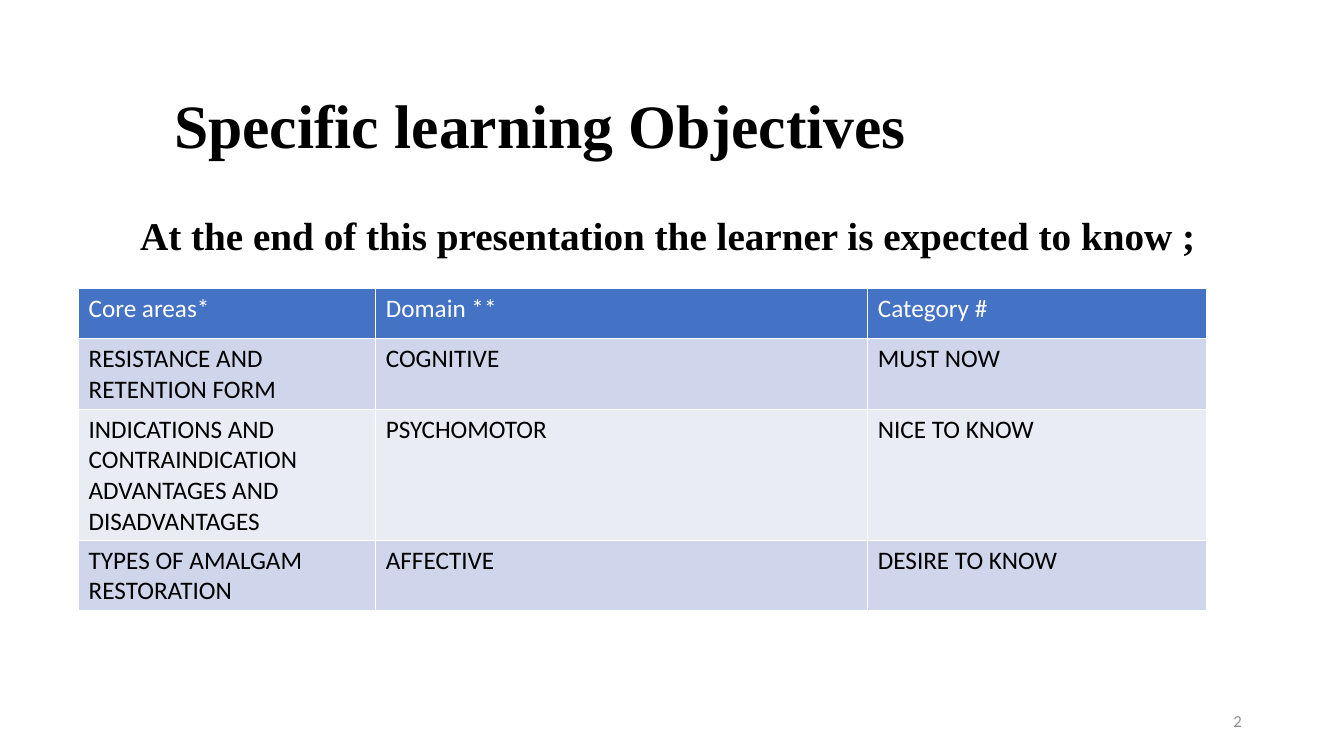
import pptx
import pptx.util
import pptx.dml.color
import pptx.enum.text
from dataclasses import dataclass

Cm = pptx.util.Cm
ALIGN = pptx.enum.text.PP_ALIGN
ANCHOR = pptx.enum.text.MSO_ANCHOR


@dataclass(frozen=True)
class Theme:
    heading_font: str = "Times New Roman"
    body_font: str = "Calibri"
    title_size: int = 44
    lead_size: int = 28
    table_size: int = 18
    number_size: int = 12
    ink: str = "000000"
    header_ink: str = "FFFFFF"
    muted: str = "8C8C8C"
    header_fill: str = "4472C4"
    bands: tuple = ("CFD5EA", "E9EBF5")


THEME = Theme()
TITLE = "Specific learning Objectives"
LEAD = "At the end of this presentation the learner is expected to know ;"
PAGE_NUMBER = "2"
OBJECTIVES = [
    ("Core areas*", "Domain **", "Category #"),
    ("RESISTANCE AND RETENTION FORM", "COGNITIVE", "MUST NOW"),
    ("INDICATIONS AND CONTRAINDICATION\nADVANTAGES AND DISADVANTAGES",
     "PSYCHOMOTOR", "NICE TO KNOW"),
    ("TYPES OF AMALGAM RESTORATION", "AFFECTIVE", "DESIRE TO KNOW"),
]
COLUMN_WIDTHS = (7.49, 12.4, 8.53)
ROW_HEIGHT = 1.27
TABLE_LEFT, TABLE_TOP = 1.98, 7.26


def color(value):
    return pptx.dml.color.RGBColor.from_string(value)


def write(frame, text, font, size, ink, bold=False, align=ALIGN.LEFT, spacing=1.0):
    frame.text = text
    for para in frame.paragraphs:
        para.alignment = align
        para.line_spacing = spacing
        para.font.name = font
        para.font.size = pptx.util.Pt(size)
        para.font.bold = bold
        para.font.color.rgb = color(ink)


def add_text(page, area, text, font, size, ink, anchor=ANCHOR.MIDDLE, **style):
    box = page.shapes.add_textbox(*map(Cm, area))
    box.text_frame.word_wrap = True
    box.text_frame.vertical_anchor = anchor
    write(box.text_frame, text, font, size, ink, **style)


def add_objectives(page):
    table = page.shapes.add_table(
        len(OBJECTIVES), len(COLUMN_WIDTHS), Cm(TABLE_LEFT), Cm(TABLE_TOP),
        Cm(sum(COLUMN_WIDTHS)), Cm(ROW_HEIGHT * len(OBJECTIVES))).table
    for column, width in zip(table.columns, COLUMN_WIDTHS):
        column.width = Cm(width)
    for row_index, texts in enumerate(OBJECTIVES):
        table.rows[row_index].height = Cm(ROW_HEIGHT)
        is_header = row_index == 0
        fill = THEME.header_fill if is_header else THEME.bands[(row_index - 1) % 2]
        ink = THEME.header_ink if is_header else THEME.ink
        for column_index, text in enumerate(texts):
            cell = table.cell(row_index, column_index)
            cell.fill.solid()
            cell.fill.fore_color.rgb = color(fill)
            write(cell.text_frame, text, THEME.body_font, THEME.table_size, ink)


def main():
    deck = pptx.Presentation()
    deck.slide_width, deck.slide_height = Cm(33.87), Cm(19.05)
    page = deck.slides.add_slide(deck.slide_layouts[6])
    add_text(page, (4.14, 1.7, 25.73, 3.07), TITLE, THEME.heading_font,
             THEME.title_size, THEME.ink, bold=True, spacing=0.9)
    add_objectives(page)
    add_text(page, (3.28, 5.21, 27.2, 1.45), LEAD, THEME.heading_font,
             THEME.lead_size, THEME.ink, anchor=ANCHOR.TOP, bold=True)
    add_text(page, (23.93, 17.65, 7.62, 1.02), PAGE_NUMBER, THEME.body_font,
             THEME.number_size, THEME.muted, align=ALIGN.RIGHT)
    deck.save("out.pptx")


if __name__ == "__main__":
    main()
